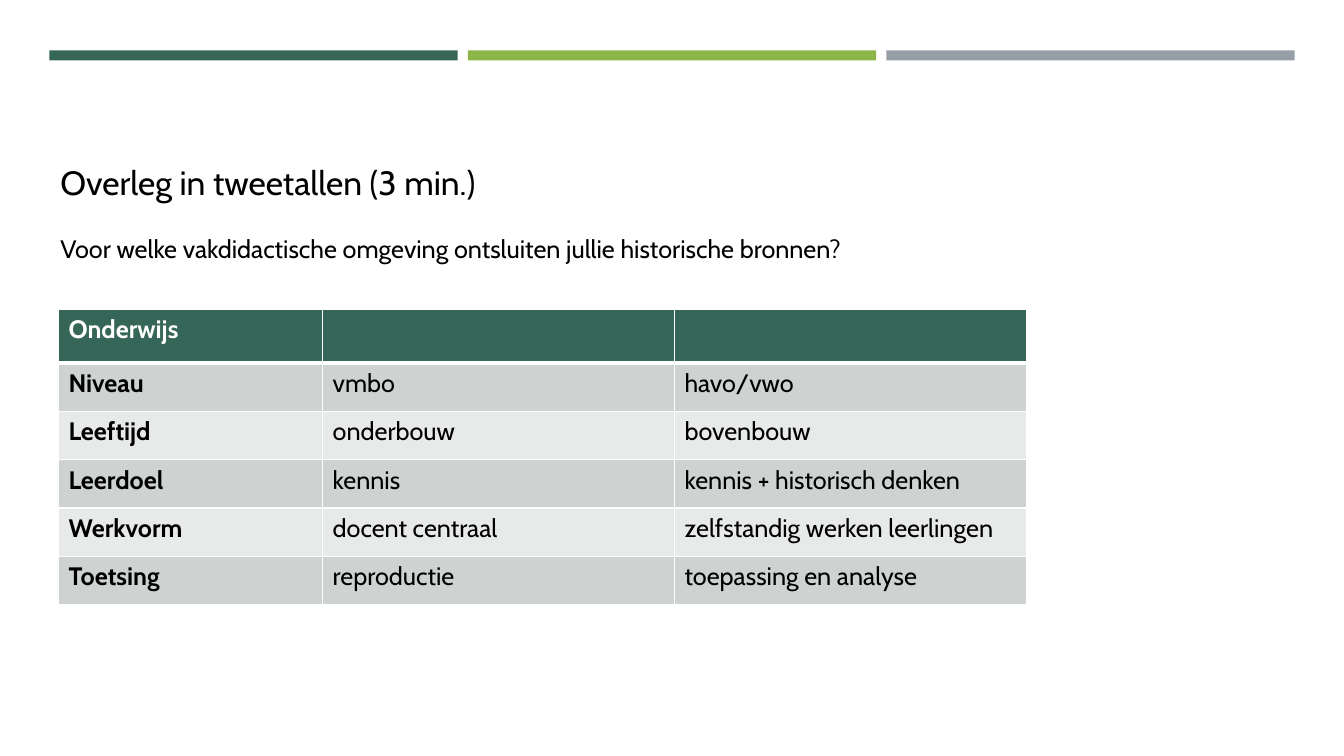
from lxml import etree
from pptx import Presentation, util as u
from pptx.dml.color import RGBColor
from pptx.enum import shapes, text
from pptx.oxml.ns import qn

FONT = "Cabin"
BLACK, WHITE, GREEN = "000000", "FFFFFF", "366658"
BANDS = ["CED3D1", "E8EAEA"]
BARS = [GREEN, "8CB64A", "969FA7"]
INTRO = [
    ("Overleg in tweetallen (3 min.)", 24, 0),
    ("Voor welke vakdidactische omgeving ontsluiten jullie historische bronnen?", 18, 22),
]
ROWS = [
    ("Onderwijs", "", ""),
    ("Niveau", "vmbo", "havo/vwo"),
    ("Leeftijd", "onderbouw", "bovenbouw"),
    ("Leerdoel", "kennis", "kennis + historisch denken"),
    ("Werkvorm", "docent centraal", "zelfstandig werken leerlingen"),
    ("Toetsing", "reproductie", "toepassing en analyse"),
]
COLUMN_WIDTHS = [2.62, 3.49, 3.49]
ROW_HEIGHTS = [0.53] + [0.48] * 5
BAR_LEFT, BAR_WIDTH, BAR_STEP = 0.49, 4.05, 4.15


def color(value):
    return RGBColor.from_string(value)


def format_paragraph(paragraph, size, font_color, bold=False):
    font = paragraph.font
    for run in paragraph.runs:
        font = run.font
    font.name, font.size, font.bold = FONT, u.Pt(size), bold
    font.color.rgb = color(font_color)


def add_borders(cell, bottom_width):
    """Put white lines round a cell, before its fill as the schema asks."""
    properties = cell._tc.get_or_add_tcPr()
    sides = [("a:lnL", 1), ("a:lnR", 1), ("a:lnT", 1), ("a:lnB", bottom_width)]
    for index, (side, width) in enumerate(sides):
        line = etree.Element(qn(side), w=str(u.Pt(width)))
        fill = etree.SubElement(line, qn("a:solidFill"))
        etree.SubElement(fill, qn("a:srgbClr"), val=WHITE)
        properties.insert(index, line)


def add_bars(slide):
    for index, bar_color in enumerate(BARS):
        bar = slide.shapes.add_shape(
            shapes.MSO_SHAPE.RECTANGLE, u.Inches(BAR_LEFT + index * BAR_STEP),
            u.Inches(0.5), u.Inches(BAR_WIDTH), u.Inches(0.1))
        bar.shadow.inherit = False
        bar.fill.solid()
        bar.fill.fore_color.rgb = color(bar_color)
        bar.line.fill.background()


def add_intro(slide):
    box = slide.shapes.add_textbox(
        u.Inches(0.5), u.Inches(1.56), u.Inches(12.29), u.Inches(1.41))
    frame = box.text_frame
    frame.word_wrap = True
    frame.auto_size = text.MSO_AUTO_SIZE.NONE
    frame.text = "\n".join(line for line, _, _ in INTRO)
    for paragraph, (_, size, space) in zip(frame.paragraphs, INTRO):
        paragraph.space_before = u.Pt(space)
        format_paragraph(paragraph, size, BLACK)


def add_education_table(slide):
    table = slide.shapes.add_table(
        len(ROWS), len(COLUMN_WIDTHS), u.Inches(0.58), u.Inches(3.07),
        u.Inches(sum(COLUMN_WIDTHS)), u.Inches(sum(ROW_HEIGHTS))).table
    for column, width in zip(table.columns, COLUMN_WIDTHS):
        column.width = u.Inches(width)
    for row_index, (row, height) in enumerate(zip(table.rows, ROW_HEIGHTS)):
        row.height = u.Inches(height)
        header = row_index == 0
        for column_index, cell in enumerate(row.cells):
            cell.text_frame.text = ROWS[row_index][column_index]
            format_paragraph(cell.text_frame.paragraphs[0], 18,
                             WHITE if header else BLACK,
                             header or column_index == 0)
            cell.fill.solid()
            cell.fill.fore_color.rgb = color(
                GREEN if header else BANDS[(row_index - 1) % 2])
            add_borders(cell, 3 if header else 1)


def main():
    presentation = Presentation()
    presentation.slide_width = u.Inches(13.33)
    presentation.slide_height = u.Inches(7.5)
    slide = presentation.slides.add_slide(presentation.slide_layouts[6])
    add_bars(slide)
    add_intro(slide)
    add_education_table(slide)
    presentation.save("out.pptx")


if __name__ == "__main__":
    main()
